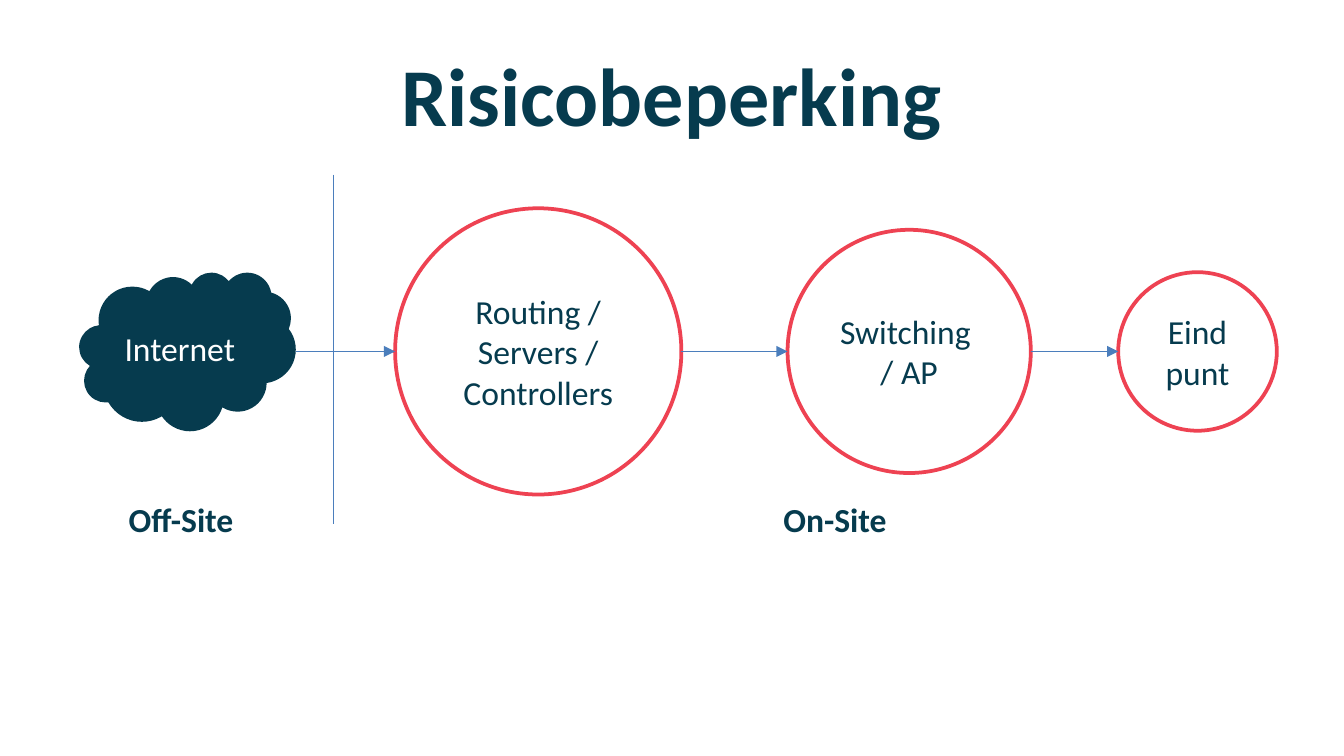
from lxml import etree
from pptx import Presentation
from pptx import util as u
from pptx.dml.color import RGBColor
from pptx.enum import shapes, text
from pptx.oxml.ns import qn

NAVY, RED, BLUE, WHITE = "063B4E", "EE4252", "4B7EBC", "FFFFFF"
CENTER = text.PP_ALIGN.CENTER
LEFT = text.PP_ALIGN.LEFT
MIDDLE = text.MSO_ANCHOR.MIDDLE
TOP = text.MSO_ANCHOR.TOP


def rgb(value):
    return RGBColor.from_string(value)


def inches(*lengths):
    return [u.Inches(length) for length in lengths]


def write(shape, wording, size, color, bold=False, align=CENTER, anchor=MIDDLE, wrap=True):
    frame = shape.text_frame
    frame.word_wrap = wrap
    frame.vertical_anchor = anchor
    paragraph = frame.paragraphs[0]
    paragraph.text = wording
    paragraph.alignment = align
    font = paragraph.font
    font.name, font.size, font.bold = "Calibri", u.Pt(size), bold
    font.color.rgb = rgb(color)


def add_title(slide, left, top, width, height):
    title = slide.shapes.add_textbox(*inches(left, top, width, height))
    write(title, "Risicobeperking", 44, NAVY, bold=True)


def add_site_label(slide, left, top, width, height, wording):
    label = slide.shapes.add_textbox(*inches(left, top, width, height))
    write(label, wording, 18, NAVY, bold=True, align=LEFT, anchor=TOP, wrap=False)
    label.text_frame.auto_size = text.MSO_AUTO_SIZE.SHAPE_TO_FIT_TEXT


def add_node(slide, kind, left, axis, width, height, wording, fill, color, outline=None):
    node = slide.shapes.add_shape(kind, *inches(left, axis - height / 2, width, height))
    node.shadow.inherit = False
    node.fill.solid()
    node.fill.fore_color.rgb = rgb(fill)
    if outline:
        node.line.color.rgb = rgb(outline)
        node.line.width = u.Pt(2)
    else:
        node.line.fill.background()
    write(node, wording, 18, color)


def add_line(slide, x1, y1, x2, y2, arrow=False):
    connector = slide.shapes.add_connector(
        shapes.MSO_CONNECTOR.STRAIGHT, *inches(x1, y1, x2, y2))
    connector.line.color.rgb = rgb(BLUE)
    connector.line.width = u.Pt(0.75)
    properties = connector._element.spPr
    if arrow:
        etree.SubElement(properties.find(qn("a:ln")), qn("a:tailEnd"), type="triangle")
    etree.SubElement(properties, qn("a:effectLst"))


def add_network(slide, left, top, width, height):
    axis = top + height / 2
    cloud_width = 1.61
    add_node(slide, shapes.MSO_SHAPE.CLOUD, left, axis, cloud_width, 1.18,
             "Internet", NAVY, WHITE)
    circles = [
        (2.35, height, "Routing / Servers / Controllers"),
        (5.27, 1.81, "Switching \v/ AP"),
        (width - 1.18, 1.18, "Eind\vpunt"),
    ]
    previous_end = left + cloud_width
    for offset, diameter, wording in circles:
        start = left + offset
        add_node(slide, shapes.MSO_SHAPE.OVAL, start, axis, diameter, diameter,
                 wording, WHITE, NAVY, RED)
        add_line(slide, previous_end, axis, start, axis, arrow=True)
        previous_end = start + diameter


def main():
    deck = Presentation()
    deck.slide_width = u.Inches(10)
    deck.slide_height = deck.slide_width * 9 // 16
    slide = deck.slides.add_slide(deck.slide_layouts[6])
    add_title(slide, 0.5, 0.23, 9, 0.94)
    add_network(slide, 0.59, 1.55, 8.91, 2.13)
    add_line(slide, 2.48, 1.3, 2.48, 3.9)
    add_site_label(slide, 0.86, 3.66, 1, 0.4, "Off-Site")
    add_site_label(slide, 5.73, 3.66, 1.01, 0.4, "On-Site")
    deck.save("out.pptx")


if __name__ == "__main__":
    main()
